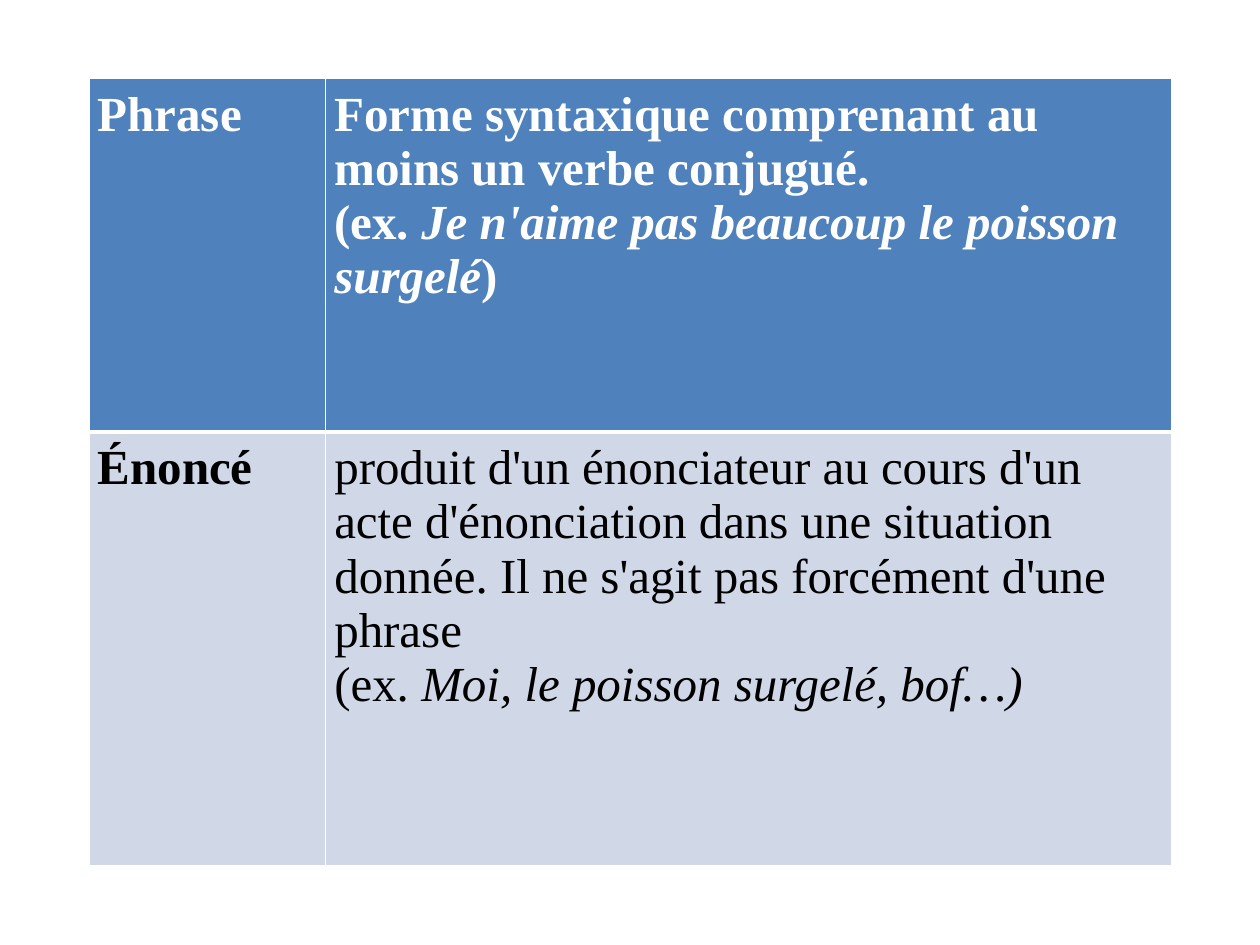
from lxml import etree
from pptx import Presentation
from pptx.dml.color import RGBColor
from pptx.oxml.ns import qn
from pptx.util import Cm, Pt

FONT, SIZE = "Times New Roman", 28
WHITE, BLACK = "FFFFFF", "000000"
COLS = (4.77, 17.06)
LEFT, TOP, INSET = 1.79, 1.58, 0.18

# Each cell is a list of lines, each line a list of (text, bold, italic).
ROWS = [
    dict(high=7.13, fill="4F81BD", ink=WHITE, edges=dict(L=1, R=1, T=1, B=3), cells=[
        [[("Phrase", True, False)]],
        [[("Forme syntaxique comprenant au moins un verbe conjugué.", True, False)],
         [("(ex. ", True, False),
          ("Je n'aime pas beaucoup le poisson surgelé", True, True),
          (")", True, False)]],
    ]),
    dict(high=8.74, fill="D0D8E8", ink=BLACK, edges=dict(L=1, R=1, T=3, B=1), cells=[
        [[("Énoncé", True, False)]],
        [[("produit d'un énonciateur au cours d'un acte d'énonciation dans une "
           "situation donnée. Il ne s'agit pas forcément d'une phrase ", False, False)],
         [("(ex. ", False, False),
          ("Moi, le poisson surgelé, bof…)", False, True)]],
    ]),
]


def paint(fill, color):
    fill.solid()
    fill.fore_color.rgb = RGBColor.from_string(color)


def border(cell, edges):
    props = cell._tc.get_or_add_tcPr()
    for side, width in edges.items():
        line = etree.SubElement(props, qn("a:ln" + side), w=str(Pt(width)))
        solid = etree.SubElement(line, qn("a:solidFill"))
        etree.SubElement(solid, qn("a:srgbClr"), val=WHITE)


def write(cell, lines, ink):
    para = cell.text_frame.paragraphs[0]
    for i, line in enumerate(lines):
        if i:
            para.add_line_break()
        for words, bold, italic in line:
            run = para.add_run()
            run.text = words
            font = run.font
            font.name, font.size = FONT, Pt(SIZE)
            font.bold, font.italic = bold, italic
            paint(font.fill, ink)


deck = Presentation()
deck.slide_width, deck.slide_height = Cm(25.4), Cm(19.05)
slide = deck.slides.add_slide(deck.slide_layouts[6])
high = sum(row["high"] for row in ROWS)
table = slide.shapes.add_table(len(ROWS), len(COLS), Cm(LEFT), Cm(TOP),
                               Cm(sum(COLS)), Cm(high)).table
table.horz_banding = False
for col, width in zip(table.columns, COLS):
    col.width = Cm(width)

for r, row in enumerate(ROWS):
    table.rows[r].height = Cm(row["high"])
    for c, lines in enumerate(row["cells"]):
        cell = table.cell(r, c)
        cell.margin_left = cell.margin_right = Cm(INSET)
        cell.margin_top = cell.margin_bottom = Cm(INSET)
        border(cell, row["edges"])
        paint(cell.fill, row["fill"])
        write(cell, lines, row["ink"])

deck.save("out.pptx")
